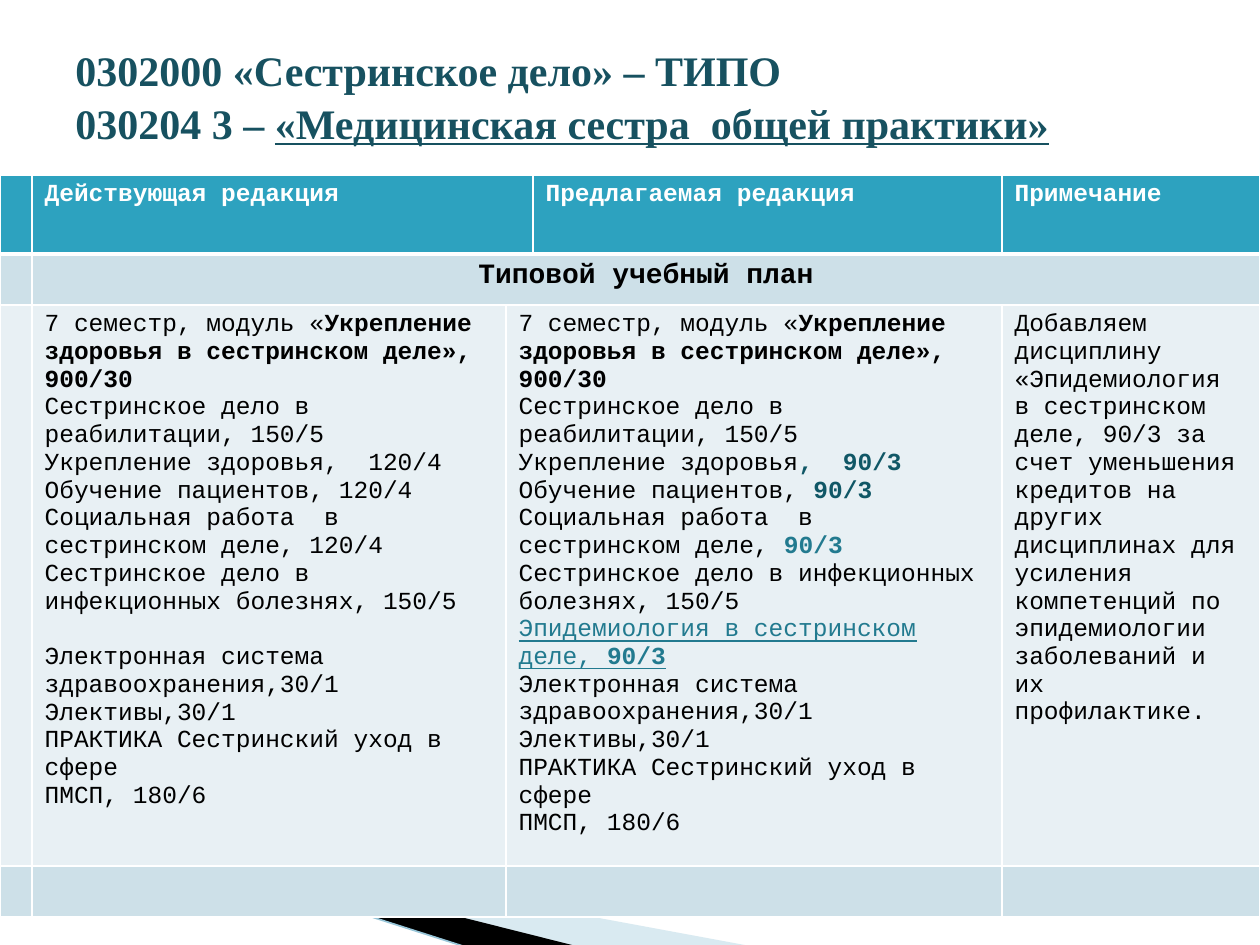
from lxml import etree
from pptx import Presentation
from pptx.dml.color import RGBColor
from pptx.enum.shapes import MSO_CONNECTOR
from pptx.enum.text import MSO_ANCHOR, PP_ALIGN
from pptx.oxml.ns import qn
from pptx.util import Emu, Pt

STRAIGHT = MSO_CONNECTOR.STRAIGHT
TOP = MSO_ANCHOR.TOP
LEFT, CENTER = PP_ALIGN.LEFT, PP_ALIGN.CENTER
SCALE = 914400 / 126

TITLE = {"name": "Times New Roman", "size": Pt(24), "bold": True, "color": "175160"}
PLAIN = {"name": "Courier New", "size": Pt(14), "bold": False, "color": "000000"}
BOLD = PLAIN | {"bold": True}
HEADER = BOLD | {"color": "FFFFFF"}
SECTION = BOLD | {"size": Pt(16)}
DARK = BOLD | {"color": "105766"}
TEAL = BOLD | {"color": "227A8F"}
ADDED = TEAL | {"underline": True}

TITLE_LINES = [
    [("0302000 «Сестринское дело» – ТИПО", TITLE)],
    [("030204 3 – ", TITLE),
     ("«Медицинская сестра  общей практики»", TITLE | {"underline": True})],
]
HEADINGS = {1: "Действующая редакция", 3: "Предлагаемая редакция", 4: "Примечание"}
MODULE = [
    [("7 семестр, модуль «", PLAIN),
     ("Укрепление здоровья в сестринском деле», 900/30", BOLD)],
    [("Сестринское дело в реабилитации, 150/5", PLAIN)],
]
INFECTIONS = [[("Сестринское дело в инфекционных болезнях, 150/5", PLAIN)]]
CLOSING = [[(text, PLAIN)] for text in (
    "Электронная система  здравоохранения,30/1",
    "Элективы,30/1",
    "ПРАКТИКА Сестринский уход в сфере",
    "ПМСП, 180/6",
)]
CURRENT = MODULE + [[(text, PLAIN)] for text in (
    "Укрепление здоровья,  120/4",
    "Обучение пациентов, 120/4",
    "Социальная работа  в сестринском деле, 120/4",
)] + INFECTIONS + CLOSING
PROPOSED = MODULE + [
    [("Укрепление здоровья", PLAIN), (",  90/3", DARK)],
    [("Обучение пациентов, ", PLAIN), ("90/3", DARK)],
    [("Социальная работа  в сестринском деле, ", PLAIN), ("90/3", TEAL)],
] + INFECTIONS + [
    [("Эпидемиология в сестринском деле, ", ADDED | {"bold": False}), ("90/3", ADDED)],
] + CLOSING
NOTE = ("Добавляем дисциплину «Эпидемиология в сестринском деле, 90/3 за счет "
        "уменьшения кредитов на других дисциплинах для усиления компетенций по "
        "эпидемиологии заболеваний и их профилактике.")

COL_WIDTHS = [32, 474, 27, 469, 258]
ROW_HEIGHTS = [79, 48, 561, 47]
ROW_FILLS = ["2DA2BF", "CDE0E8", "E8F0F4", "CDE0E8"]
MERGES = [(0, 1, 2), (1, 1, 4), (2, 2, 3), (3, 2, 3)]


def px(n):
    """Turn pixels into EMU."""
    return Emu(round(n * SCALE))


def paint(color_format, color):
    """Set a colour from a hex string."""
    color_format.rgb = RGBColor.from_string(color)


def write(tf, paras, align=LEFT, gaps=None):
    """Write paragraphs of (text, format) runs, with optional gaps by index."""
    for i, runs in enumerate(paras):
        p = tf.paragraphs[0] if i == 0 else tf.add_paragraph()
        p.alignment = align
        if gaps and i in gaps:
            p.space_before = Pt(gaps[i])
        for text, style in runs:
            r = p.add_run()
            r.text = text
            for key, value in style.items():
                if key == "color":
                    paint(r.font.color, value)
                else:
                    setattr(r.font, key, value)


def set_borders(cell, widths):
    """Give a cell white borders, with widths in points by edge."""
    tcPr = cell._tc.get_or_add_tcPr()
    for edge, width in widths.items():
        ln = etree.SubElement(tcPr, qn(f"a:ln{edge}"), w=str(Pt(width)))
        fill = etree.SubElement(ln, qn("a:solidFill"))
        etree.SubElement(fill, qn("a:srgbClr"), val="FFFFFF")


def add_wedge(s, x, y, points, color, alpha=100):
    """Draw a filled polygon from points relative to x, y."""
    fb = s.shapes.build_freeform(x, y, scale=SCALE)
    fb.add_line_segments([(x + dx, y + dy) for dx, dy in points], close=True)
    sp = fb.convert_to_shape()
    sp.shadow.inherit = False
    sp.fill.solid()
    paint(sp.fill.fore_color, color)
    sp.line.fill.background()
    clr = sp._element.spPr.find(qn("a:solidFill"))[0]
    etree.SubElement(clr, qn("a:alpha"), val=str(alpha * 1000))


def add_decoration(s, x, y):
    """Draw the wedges and the line that sweep across the bottom."""
    add_wedge(s, x + 2, y + 2, [(681, 126), (506, 126)], "A0CBDC", 40)
    add_wedge(s, x, y, [(509, 128), (402, 130), (1, 1)], "000000")
    line = s.shapes.add_connector(
        STRAIGHT, px(x - 68), px(y - 20), px(x + 402), px(y + 130))
    paint(line.line.color, "97C5D8")
    line.line.width = Pt(0.95)
    etree.SubElement(line._element.spPr, qn("a:effectLst"))


def add_title(s, x, y, w, h):
    """Place the two-line title."""
    tf = s.shapes.add_textbox(px(x), px(y), px(w), px(h)).text_frame
    tf.word_wrap = True
    tf.vertical_anchor = TOP
    tf.margin_top = 0
    write(tf, TITLE_LINES)
    for p in tf.paragraphs:
        p.line_spacing = 1.05


def add_plan_table(s, x, y):
    """Place the table that compares the two editions of the plan."""
    table = s.shapes.add_table(
        len(ROW_HEIGHTS), len(COL_WIDTHS), px(x), px(y),
        px(sum(COL_WIDTHS)), px(sum(ROW_HEIGHTS))).table
    for col, width in zip(table.columns, COL_WIDTHS):
        col.width = px(width)
    for i, (row, height) in enumerate(zip(table.rows, ROW_HEIGHTS)):
        row.height = px(height)
        for cell in row.cells:
            set_borders(cell, {"L": 1, "R": 1, "B": 3 if i == 0 else 1})
            cell.fill.solid()
            paint(cell.fill.fore_color, ROW_FILLS[i])
    for row, first, last in MERGES:
        table.cell(row, first).merge(table.cell(row, last))
    for col, text in HEADINGS.items():
        write(table.cell(0, col).text_frame, [[(text, HEADER)]])
    write(table.cell(1, 1).text_frame, [[("Типовой учебный план", SECTION)]], CENTER)
    closing_start = len(CURRENT) - len(CLOSING)
    write(table.cell(2, 1).text_frame, CURRENT, gaps={closing_start: 16})
    write(table.cell(2, 2).text_frame, PROPOSED)
    write(table.cell(2, 4).text_frame, [[(NOTE, PLAIN)]])


def main():
    """Build and save the slide."""
    prs = Presentation()
    prs.slide_width, prs.slide_height = px(1260), px(945)
    s = prs.slides.add_slide(prs.slide_layouts[6])
    add_decoration(s, 67, 818)
    add_plan_table(s, 0, 175)
    add_title(s, 63, 42, 1134, 120)
    prs.save("out.pptx")


if __name__ == "__main__":
    main()
